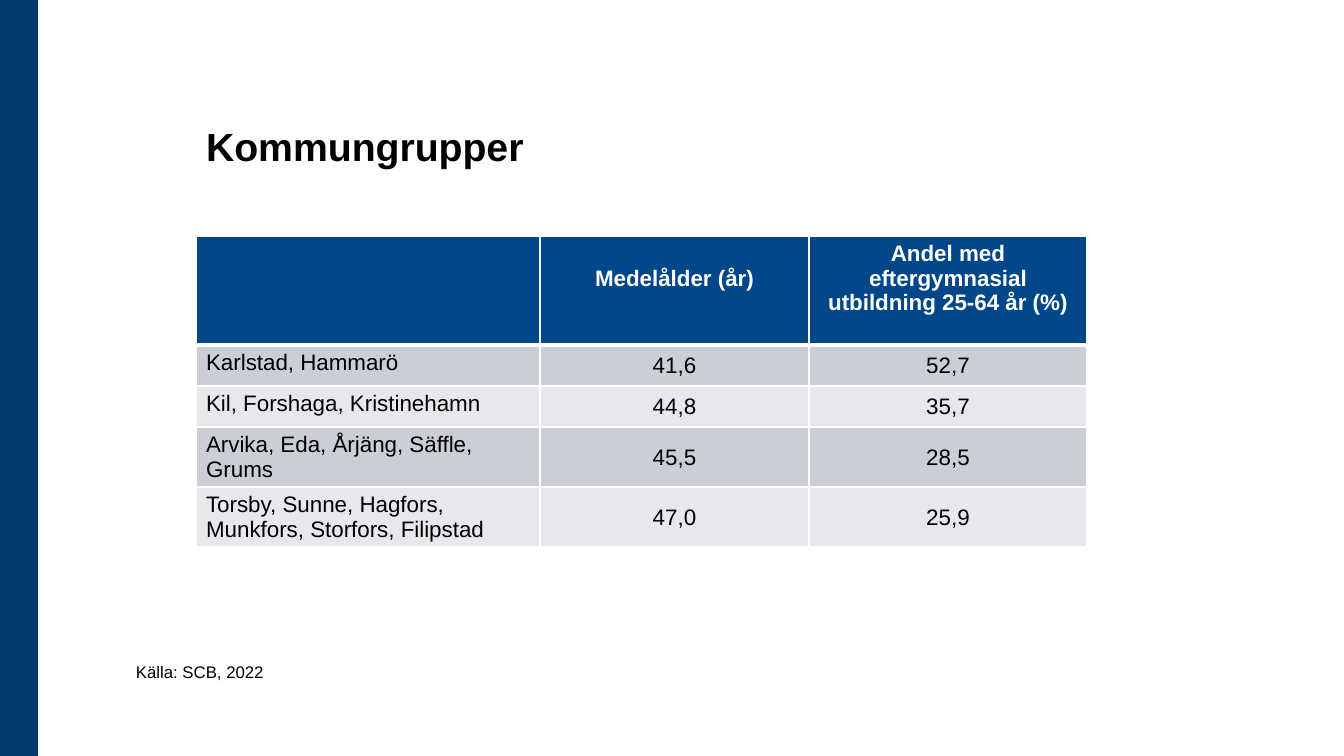
from lxml import etree
from pptx import Presentation
from pptx import util as u
from pptx.dml.color import RGBColor
from pptx.enum import shapes, text
from pptx.oxml.ns import qn

# Content
TITLE = "Kommungrupper"
SOURCE = "Källa: SCB, 2022"
HEADER = ("", "Medelålder (år)", "Andel med eftergymnasial utbildning 25-64 år (%)")
GROUPS = [
    ("Karlstad, Hammarö", "41,6", "52,7"),
    ("Kil, Forshaga, Kristinehamn", "44,8", "35,7"),
    ("Arvika, Eda, Årjäng, Säffle, Grums", "45,5", "28,5"),
    ("Torsby, Sunne, Hagfors, Munkfors, Storfors, Filipstad", "47,0", "25,9"),
]

# Layout in px
SLIDE = (1344, 756)
BAR = (0, 0, 38, 756)
TITLE_BOX = (196, 119, 952, 55)
TABLE_AT = (196, 236)
COLUMNS = (344, 269, 278)
ROWS = (109, 41, 41, 60, 60)
SOURCE_BOX = (126, 657, 352, 30)
HEADER_DROP = 30  # top margin that lowers the one-line heading
VALUE_MARGIN = 1


class Theme:
    font = "Arial"
    title, body, small = 28, 16, 12
    black, white = "000000", "FFFFFF"
    bar, header = "003A70", "00478A"
    bands = ("CCCED5", "E7E8EB")
    rule, heavy_rule = 1, 3


def px(n):
    return u.Emu(round(n * 914400 / 100.8))


def box(values):
    return [px(v) for v in values]


def paint(fill, color):
    fill.solid()
    fill.fore_color.rgb = RGBColor.from_string(color)


def write(tf, words, size=Theme.body, color=Theme.black, bold=False,
          align=text.PP_ALIGN.LEFT):
    tf.word_wrap = True
    p = tf.paragraphs[0]
    p.alignment = align
    r = p.add_run()
    r.text = words
    r.font.name, r.font.size, r.font.bold = Theme.font, u.Pt(size), bold
    r.font.color.rgb = RGBColor.from_string(color)


def add_borders(cell, top, bottom):
    widths = {"lnL": Theme.rule, "lnR": Theme.rule, "lnT": top, "lnB": bottom}
    tc_pr = cell._tc.get_or_add_tcPr()
    for i, (side, width) in enumerate(widths.items()):
        line = etree.Element(qn("a:" + side), w=str(u.Pt(width)))
        solid = etree.SubElement(line, qn("a:solidFill"))
        etree.SubElement(solid, qn("a:srgbClr"), val=Theme.white)
        tc_pr.insert(i, line)


def add_table(s):
    size = (sum(COLUMNS), sum(ROWS))
    table = s.shapes.add_table(len(ROWS), len(COLUMNS), *box(TABLE_AT + size)).table
    for column, width in zip(table.columns, COLUMNS):
        column.width = px(width)
    for row, height in zip(table.rows, ROWS):
        row.height = px(height)

    for i, record in enumerate([HEADER] + GROUPS):
        head = i == 0
        for j, words in enumerate(record):
            cell = table.cell(i, j)
            paint(cell.fill, Theme.header if head else Theme.bands[(i - 1) % 2])
            add_borders(cell,
                        top=Theme.heavy_rule if i == 1 else Theme.rule,
                        bottom=Theme.heavy_rule if head else Theme.rule)
            if words:
                write(cell.text_frame, words, bold=head,
                      color=Theme.white if head else Theme.black,
                      align=text.PP_ALIGN.CENTER if j else text.PP_ALIGN.LEFT)
            if j and not head:
                cell.vertical_anchor = text.MSO_ANCHOR.MIDDLE
                cell.margin_left = cell.margin_right = px(VALUE_MARGIN)
                cell.margin_top, cell.margin_bottom = px(VALUE_MARGIN), 0
    table.cell(0, 1).margin_top = px(HEADER_DROP)


def main():
    prs = Presentation()
    prs.slide_width, prs.slide_height = box(SLIDE)
    s = prs.slides.add_slide(prs.slide_layouts[5])

    # Side bar
    bar = s.shapes.add_shape(shapes.MSO_SHAPE.RECTANGLE, *box(BAR))
    bar.shadow.inherit = False
    paint(bar.fill, Theme.bar)
    bar.line.fill.background()

    # Title
    title = s.shapes.title
    title.left, title.top, title.width, title.height = box(TITLE_BOX)
    paint(title.fill, Theme.white)
    title.text_frame.auto_size = text.MSO_AUTO_SIZE.NONE
    title.text_frame.vertical_anchor = text.MSO_ANCHOR.BOTTOM
    write(title.text_frame, TITLE, size=Theme.title, bold=True)

    # Table and source line
    add_table(s)
    source = s.shapes.add_textbox(*box(SOURCE_BOX))
    write(source.text_frame, SOURCE, size=Theme.small)
    source.text_frame.auto_size = text.MSO_AUTO_SIZE.SHAPE_TO_FIT_TEXT

    prs.save("out.pptx")


if __name__ == "__main__":
    main()
